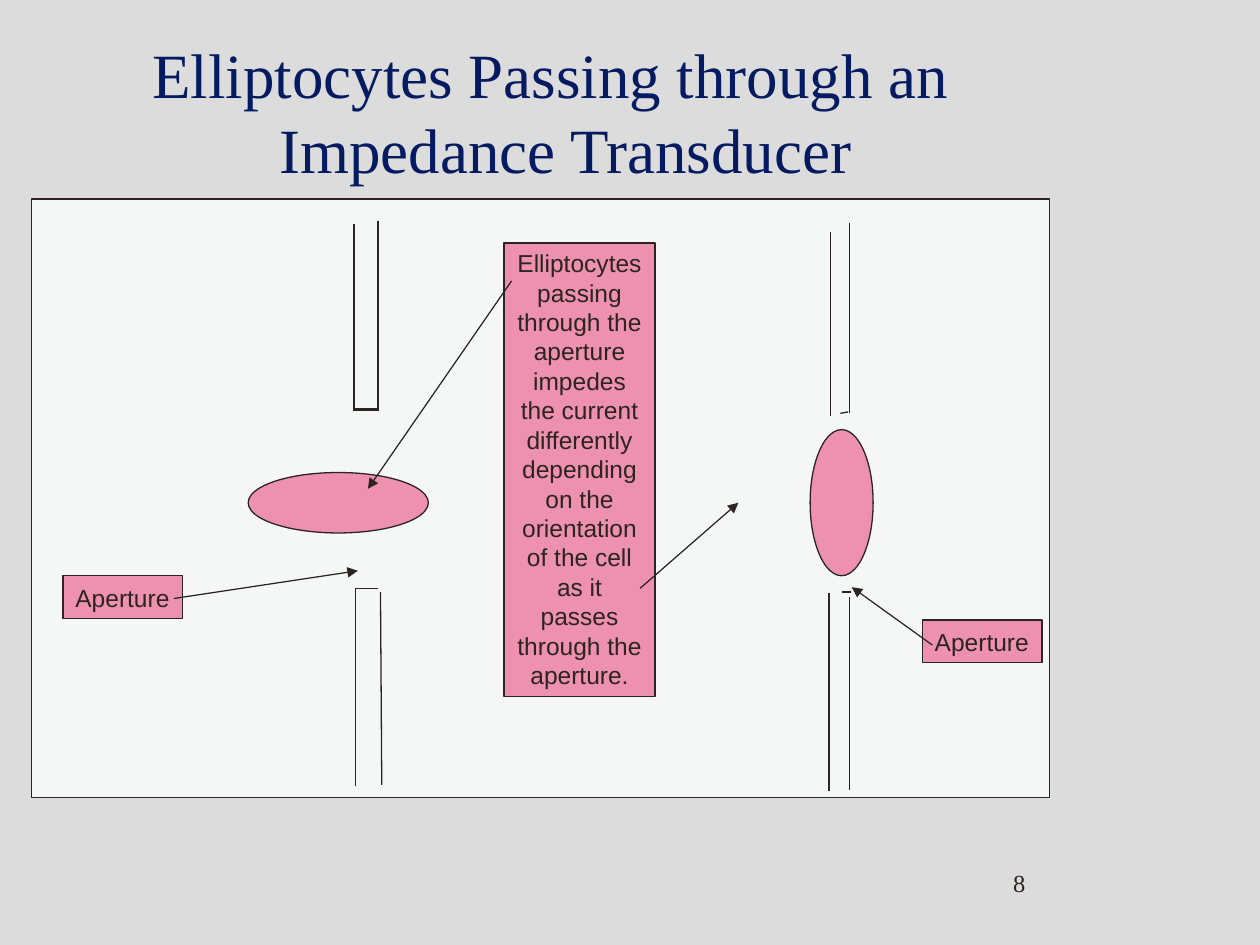
from dataclasses import dataclass

from lxml.etree import SubElement
from pptx import Presentation
from pptx.dml.color import RGBColor
from pptx.enum.shapes import MSO_CONNECTOR, MSO_SHAPE
from pptx.enum.text import MSO_ANCHOR, PP_ALIGN
from pptx.oxml.ns import qn
from pptx.util import Inches, Pt

COLORS = {
    "background": "DCDCDC",
    "panel": "F5F7F7",
    "cell": "E92B6A",
    "ink": "2C2424",
    "title": "051B61",
}


@dataclass(frozen=True)
class Block:
    left: float
    top: float
    width: float
    height: float
    text: str = ""


@dataclass(frozen=True)
class Stroke:
    x1: float
    y1: float
    x2: float
    y2: float
    weight: float = 0.75


PANEL = Block(0.25, 1.58, 8.08, 4.75)
ELLIPTOCYTES = [Block(1.97, 3.75, 1.43, 0.48), Block(6.43, 3.41, 0.5, 1.16)]
APERTURE_LABELS = [
    Block(0.5, 4.57, 0.95, 0.34, "Aperture"),
    Block(7.32, 4.92, 0.95, 0.34, "Aperture"),
]
EXPLANATION_LINES = [
    "Elliptocytes", "passing", "through the", "aperture", "impedes",
    "the current", "differently", "depending", "on the", "orientation",
    "of the cell", "as it", "passes", "through the", "aperture.",
]
EXPLANATION = Block(4, 1.93, 1.2, 3.6, "\v".join(EXPLANATION_LINES))
TITLE = Block(1.21, 0.26, 6.6, 1.23,
              "Elliptocytes Passing through an\vImpedance Transducer")
PAGE_NUMBER = Block(8.04, 6.89, 0.28, 0.24, "8")

APERTURE_WALLS = [
    Stroke(2.81, 1.78, 2.81, 3.24),
    Stroke(2.8, 3.25, 2.99, 3.25, 1.84),
    Stroke(3, 1.75, 3, 3.26),
    Stroke(2.82, 4.67, 2.82, 6.24),
    Stroke(2.82, 4.67, 3, 4.67),
    Stroke(3.02, 4.7, 3.03, 6.23),
    Stroke(6.59, 1.84, 6.59, 3.3),
    Stroke(6.67, 3.28, 6.73, 3.27),
    Stroke(6.74, 1.77, 6.74, 3.28),
    Stroke(6.58, 4.71, 6.58, 6.28),
    Stroke(6.68, 4.7, 6.75, 4.7, 0.94),
    Stroke(6.74, 4.74, 6.74, 6.27),
]
POINTERS = [
    Stroke(1.38, 4.75, 2.84, 4.53, 0.7),
    Stroke(7.4, 5.12, 6.76, 4.66, 0.7),
    Stroke(4.06, 2.23, 2.92, 3.88, 0.7),
    Stroke(5.08, 4.67, 5.86, 3.99, 0.7),
]


def rgb(name: str) -> RGBColor:
    return RGBColor.from_string(COLORS[name])


def write(shape, text: str, font: str, size: float, color: str,
          inset: float = 0, top: float = 0):
    frame = shape.text_frame
    frame.word_wrap = True
    frame.margin_left = frame.margin_right = Inches(inset)
    frame.margin_top, frame.margin_bottom = Inches(top), 0
    paragraph = frame.paragraphs[0]
    paragraph.text = text
    paragraph.alignment = PP_ALIGN.LEFT
    paragraph.font.name = font
    paragraph.font.size = Pt(size)
    paragraph.font.color.rgb = rgb(color)
    return paragraph


def add_block(slide, block: Block, kind: MSO_SHAPE, fill: str, opacity: int = 100):
    shape = slide.shapes.add_shape(kind, Inches(block.left), Inches(block.top),
                                   Inches(block.width), Inches(block.height))
    shape.shadow.inherit = False
    shape.fill.solid()
    shape.fill.fore_color.rgb = rgb(fill)
    shape.line.color.rgb = rgb("ink")
    shape.line.width = Pt(0.75)
    if opacity < 100:
        fill_color = shape.fill._xPr.find(qn("a:solidFill"))[0]
        SubElement(fill_color, qn("a:alpha"), val=str(opacity * 1000))
    return shape


def add_text(slide, block: Block, size: float, color: str, top: float = 0):
    box = slide.shapes.add_textbox(Inches(block.left), Inches(block.top),
                                   Inches(block.width), Inches(block.height))
    return write(box, block.text, "Times New Roman", size, color, top=top)


def add_stroke(slide, stroke: Stroke, arrow: bool = False) -> None:
    connector = slide.shapes.add_connector(
        MSO_CONNECTOR.STRAIGHT, Inches(stroke.x1), Inches(stroke.y1),
        Inches(stroke.x2), Inches(stroke.y2))
    connector.line.color.rgb = rgb("ink")
    connector.line.width = Pt(stroke.weight)
    if arrow:
        SubElement(connector.line._get_or_add_ln(), qn("a:tailEnd"), type="triangle")
    SubElement(connector._element.spPr, qn("a:effectLst"))


def main() -> None:
    presentation = Presentation()
    presentation.slide_width = Inches(10)
    presentation.slide_height = Inches(7.5)
    slide = presentation.slides.add_slide(presentation.slide_layouts[6])
    slide.background.fill.solid()
    slide.background.fill.fore_color.rgb = rgb("background")

    title = add_text(slide, TITLE, 36, "title", top=0.02)
    properties = title._p.get_or_add_pPr()
    properties.set("marL", str(Inches(1.01)))
    properties.set("indent", str(Inches(-1.01)))

    add_block(slide, PANEL, MSO_SHAPE.RECTANGLE, "panel")
    for wall in APERTURE_WALLS:
        add_stroke(slide, wall)
    for elliptocyte in ELLIPTOCYTES:
        add_block(slide, elliptocyte, MSO_SHAPE.OVAL, "cell", 50)

    for label in APERTURE_LABELS:
        box = add_block(slide, label, MSO_SHAPE.RECTANGLE, "cell", 50)
        box.text_frame.vertical_anchor = MSO_ANCHOR.MIDDLE
        write(box, label.text, "Arial", 14, "ink", inset=0.1)

    box = add_block(slide, EXPLANATION, MSO_SHAPE.RECTANGLE, "cell", 50)
    box.text_frame.vertical_anchor = MSO_ANCHOR.TOP
    explanation = write(box, EXPLANATION.text, "Arial", 14, "ink", inset=0.05, top=0.04)
    explanation.alignment = PP_ALIGN.CENTER

    for pointer in POINTERS:
        add_stroke(slide, pointer, arrow=True)
    add_text(slide, PAGE_NUMBER, 14, "ink")

    presentation.save("out.pptx")


if __name__ == "__main__":
    main()
